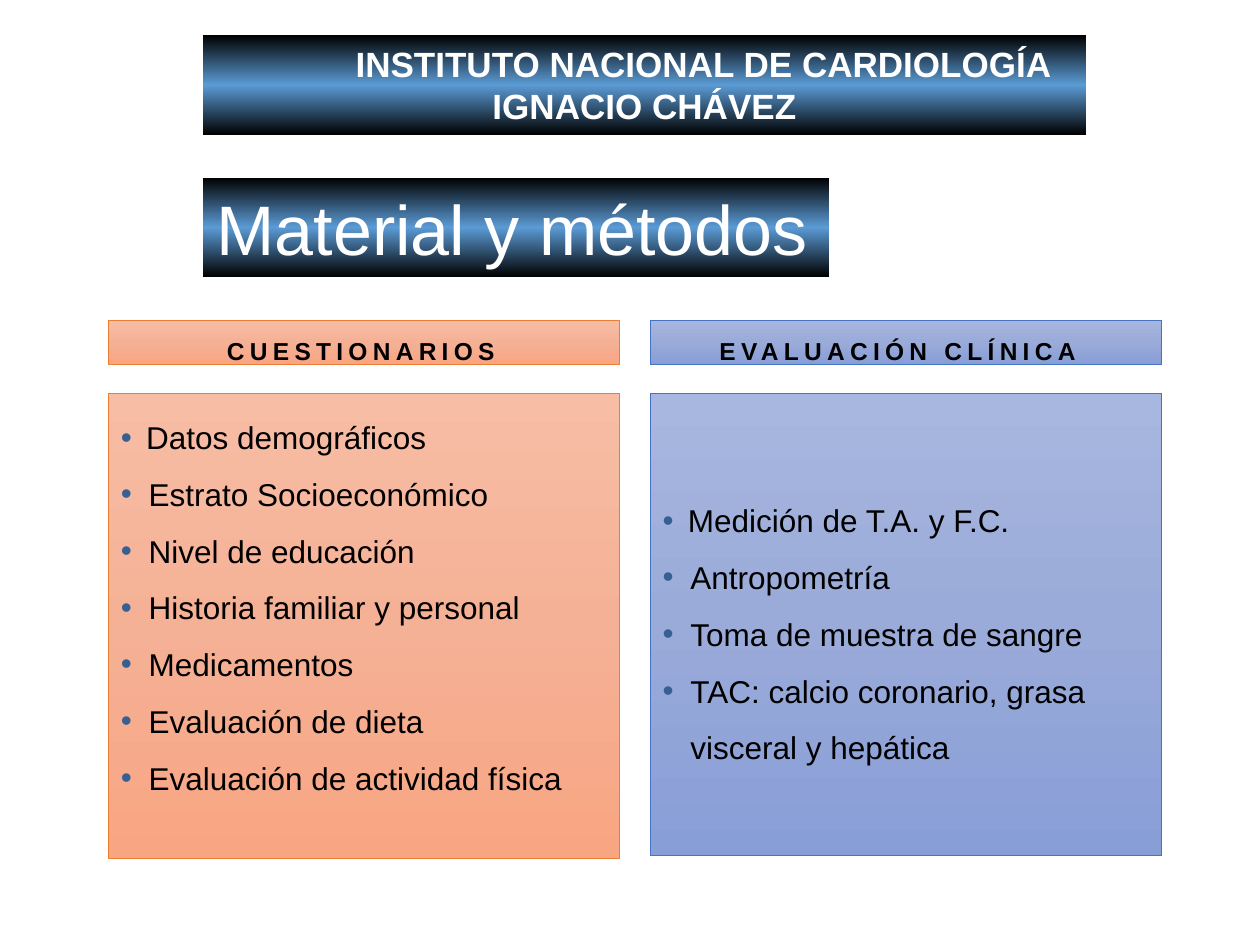
import copy

import lxml.etree
import pptx
import pptx.dml.color
import pptx.enum.shapes
import pptx.enum.text
import pptx.oxml.ns
import pptx.util

Inches = pptx.util.Inches
Pt = pptx.util.Pt
Align = pptx.enum.text.PP_ALIGN
Anchor = pptx.enum.text.MSO_ANCHOR
qn = pptx.oxml.ns.qn

HUES = {
    "ink": "000000",
    "white": "FFFFFF",
    "bullet": "376092",
    "orange": "ED7D31",
    "blue": "4472C4",
}
FADES = {
    "orange": ("F7BDA5", "F5B196", "F8A582"),
    "blue": ("A8B7DF", "9AABD9", "889ED7"),
    "banner": ("000000", "5B9BD5", "000000"),
}
SURVEY = [
    "Datos demográficos",
    "Estrato Socioeconómico",
    "Nivel de educación",
    "Historia familiar y personal",
    "Medicamentos",
    "Evaluación de dieta",
    "Evaluación de actividad física",
]
CLINIC = [
    "Medición de T.A. y F.C.",
    "Antropometría",
    "Toma de muestra de sangre",
    "TAC: calcio coronario, grasa",
    "visceral y hepática",
]


def rgb(code):
    return pptx.dml.color.RGBColor.from_string(code)


class Deck:
    """Style and current slide."""

    font = "Arial"

    def __init__(self, slide):
        self.slide = slide

    def place(self, shape, box, fade, edge=None):
        """Move the shape and give it a vertical three-stop gradient."""
        shape.left, shape.top, shape.width, shape.height = map(Inches, box)
        shape.fill.gradient()
        shape.fill.gradient_angle = 270
        stops = shape.element.spPr.find(".//" + qn("a:gsLst"))
        stops.insert(1, copy.deepcopy(stops[0]))
        for i, stop in enumerate(shape.fill.gradient_stops):
            stop.position = i / 2
            stop.color.rgb = rgb(FADES[fade][i])
        if edge:
            shape.line.color.rgb = rgb(HUES[edge])
            shape.line.width = Pt(0.5)
        else:
            shape.line.fill.background()

    def frame(self, shape, anchor, side=0.1, end=0.05, right=None):
        text = shape.text_frame
        text.auto_size = pptx.enum.text.MSO_AUTO_SIZE.NONE
        text.word_wrap = True
        text.vertical_anchor = anchor
        text.margin_left = Inches(side)
        text.margin_right = Inches(side if right is None else right)
        text.margin_top = text.margin_bottom = Inches(end)
        return text

    def line(self, text, i, words, size, hue, bold=False, align=Align.LEFT):
        """Write paragraph i of a text frame as one run."""
        para = text.paragraphs[0] if i == 0 else text.add_paragraph()
        para.alignment = align
        para.space_before = Pt(0)
        run = para.add_run()
        run.text = words
        run.font.name = self.font
        run.font.size = Pt(size)
        run.font.bold = bold
        run.font.color.rgb = rgb(HUES[hue])
        return para

    def indent(self, para, left, hang=0):
        props = para._p.get_or_add_pPr()
        props.set("marL", str(Inches(left)))
        props.set("indent", str(Inches(-hang)))
        return props

    def banner(self, box, lines, shift):
        """Centred bold lines, the first one moved right by an indent."""
        kind = pptx.enum.shapes.MSO_SHAPE.RECTANGLE
        shape = self.slide.shapes.add_shape(kind, *map(Inches, box))
        shape.shadow.inherit = False
        self.place(shape, box, "banner")
        text = self.frame(shape, Anchor.TOP, 0.11, 0.06)
        for i, words in enumerate(lines):
            para = self.line(text, i, words, 20, "white", True, Align.CENTER)
            self.indent(para, 0 if i else shift)

    def title(self, box, words):
        shape = self.slide.shapes.title
        self.place(shape, box, "banner")
        text = self.frame(shape, Anchor.TOP, 0.11, 0.06)
        self.line(text, 0, words, 40, "white")

    def head(self, shape, box, words, tone, right):
        self.place(shape, box, tone, tone)
        text = self.frame(shape, Anchor.MIDDLE, right=right)
        para = self.line(text, 0, words, 14, "ink", True, Align.CENTER)
        self.indent(para, 0)
        para.line_spacing = Pt(27)
        para.runs[0].font._element.set("spc", "300")

    def items(self, shape, box, rows, tone, anchor, plain=()):
        """Bulleted rows; those numbered in plain carry no bullet."""
        self.place(shape, box, tone, tone)
        text = self.frame(shape, anchor)
        for i, words in enumerate(rows):
            para = self.line(text, i, words, 18, "ink")
            para.line_spacing = 1.5
            left = 0.22 if i else 0.2
            if i in plain:
                props = self.indent(para, left)
                lxml.etree.SubElement(props, qn("a:buNone"))
                continue
            props = self.indent(para, left, left)
            tint = lxml.etree.SubElement(props, qn("a:buClr"))
            lxml.etree.SubElement(tint, qn("a:srgbClr"), val=HUES["bullet"])
            lxml.etree.SubElement(props, qn("a:buFont"), typeface=self.font)
            lxml.etree.SubElement(props, qn("a:buChar"), char="•")


def main():
    show = pptx.Presentation()
    show.slide_width, show.slide_height = Inches(10), Inches(7.5)
    slide = show.slides.add_slide(show.slide_layouts.get_by_name("Comparison"))
    deck = Deck(slide)
    slots = slide.placeholders
    wide, left, right = 4.06, 0.86, 5.16

    deck.items(slots[2], (left, 3.12, wide, 3.69), SURVEY, "orange", Anchor.TOP)
    deck.items(slots[4], (right, 3.12, wide, 3.67), CLINIC, "blue",
               Anchor.MIDDLE, plain=(4,))
    deck.head(slots[1], (left, 2.54, wide, 0.35), "CUESTIONARIOS", "orange", 0.15)
    deck.head(slots[3], (right, 2.54, wide, 0.35), "EVALUACIÓN CLÍNICA", "blue", 0.23)
    deck.banner((1.61, 0.28, 7.01, 0.79),
                ["INSTITUTO NACIONAL DE CARDIOLOGÍA", "IGNACIO CHÁVEZ"], 0.94)
    deck.title((1.61, 1.41, 4.97, 0.79), "Material y métodos")
    show.save("out.pptx")


if __name__ == "__main__":
    main()
